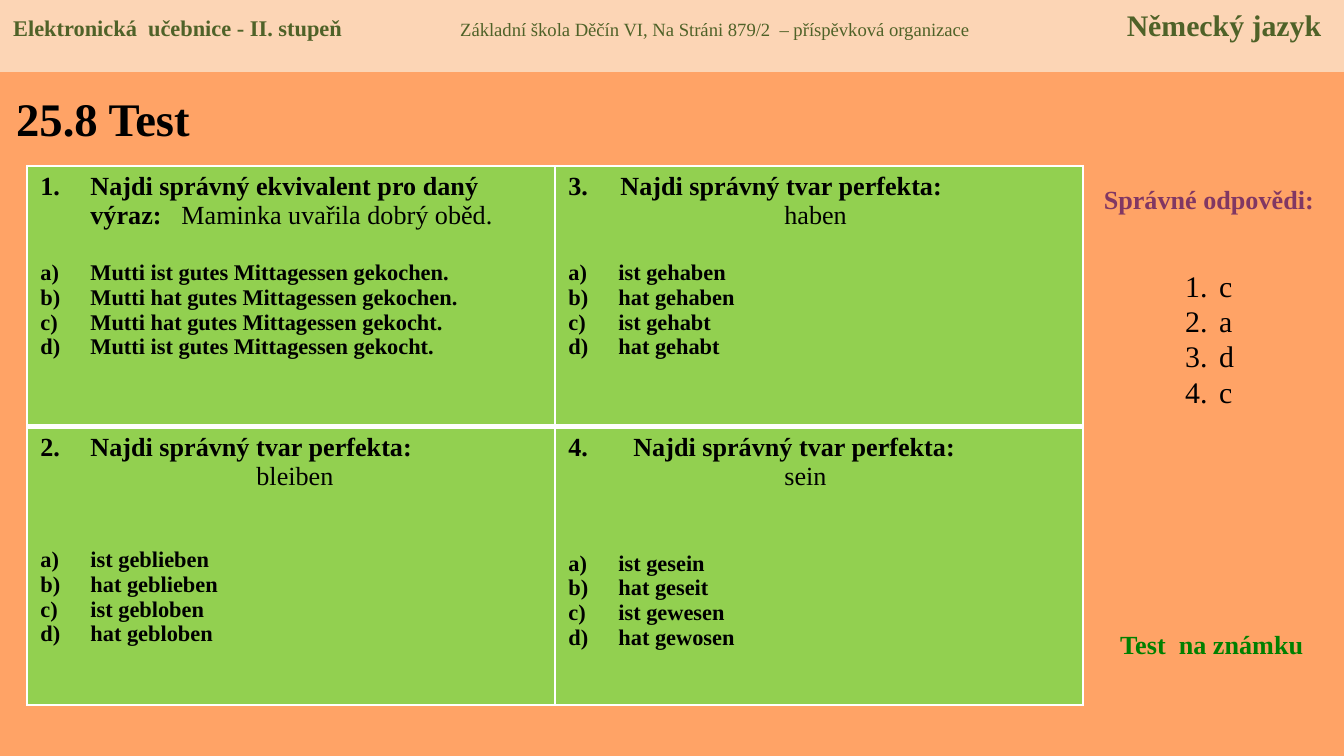
import pptx
import pptx.dml.color
import pptx.enum.shapes
import pptx.enum.text
import pptx.oxml.ns
import pptx.util
from dataclasses import dataclass
from lxml import etree

PX = 914400 / 134.4
ALIGN = pptx.enum.text.PP_ALIGN
ANCHOR = pptx.enum.text.MSO_ANCHOR


@dataclass(frozen=True)
class Theme:
    font: str = "Times New Roman"
    back: str = "FFA366"
    band: str = "FCD5B5"
    cell: str = "92D050"
    rule: str = "FFFFFF"
    ink: str = "000000"
    olive: str = "4F6228"
    plum: str = "813763"
    green: str = "008000"
    title: int = 25
    large: int = 16
    head: int = 14
    body: int = 12
    small: int = 10


THEME = Theme()

# Number, indent of the heading, gap before the options (pt), heading, word, options
TASKS = [
    [(1, 50, 16, "Najdi správný ekvivalent pro daný výraz:", "Maminka uvařila dobrý oběd.",
      ["Mutti ist gutes Mittagessen gekochen.", "Mutti hat gutes Mittagessen gekochen.",
       "Mutti hat gutes Mittagessen gekocht.", "Mutti ist gutes Mittagessen gekocht."]),
     (3, 52, 16, "Najdi správný tvar perfekta:", "haben",
      ["ist gehaben", "hat gehaben", "ist gehabt", "hat gehabt"])],
    [(2, 50, 30, "Najdi správný tvar perfekta:", "bleiben",
      ["ist geblieben", "hat geblieben", "ist gebloben", "hat gebloben"]),
     (4, 65, 32, "Najdi správný tvar perfekta:", "sein",
      ["ist gesein", "hat geseit", "ist gewesen", "hat gewosen"])],
]


def emu(px):
    return round(px * PX)


def color(code):
    return pptx.dml.color.RGBColor.from_string(code)


def sub(node, tag, **attrs):
    return etree.SubElement(node, pptx.oxml.ns.qn(tag), **attrs)


def write(para, text, size, ink=THEME.ink, bold=False):
    run = para.add_run()
    run.text = text
    font = run.font
    font.name, font.size, font.bold = THEME.font, pptx.util.Pt(size), bold
    font.color.rgb = color(ink)


def tabs(para, *stops):
    """Add tab stops, each a pair of px and alignment."""
    group = sub(para._p.get_or_add_pPr(), "a:tabLst")
    for px, side in stops:
        sub(group, "a:tab", pos=str(emu(px)), algn=side)


def number(para, indent, kind, start=1):
    """Number a paragraph with a hanging indent in px."""
    props = para._p.get_or_add_pPr()
    props.set("marL", str(emu(indent)))
    props.set("indent", str(-emu(indent)))
    sub(props, "a:buFont", typeface="+mj-lt")
    sub(props, "a:buAutoNum", type=kind, startAt=str(start))


def label(slide, box, text, size, ink=THEME.ink, bold=True,
          align=ALIGN.LEFT, anchor=ANCHOR.TOP):
    frame = slide.shapes.add_textbox(*map(emu, box)).text_frame
    frame.word_wrap = True
    frame.vertical_anchor = anchor
    para = frame.paragraphs[0]
    para.alignment = align
    write(para, text, size, ink, bold)


def header(slide, box):
    band = slide.shapes.add_shape(pptx.enum.shapes.MSO_SHAPE.RECTANGLE, *map(emu, box))
    band.shadow.inherit = False
    band.fill.solid()
    band.fill.fore_color.rgb = color(THEME.band)
    band.line.fill.background()
    frame = band.text_frame
    frame.word_wrap = True
    frame.vertical_anchor = ANCHOR.TOP
    para = frame.paragraphs[0]
    para.alignment = ALIGN.LEFT
    tabs(para, (447, "l"), (box[2] - 36, "r"))
    write(para, "Elektronická  učebnice - II. stupeň\t", THEME.body, THEME.olive, True)
    write(para, "Základní škola Děčín VI, Na Stráni 879/2  – příspěvková organizace\t",
          THEME.small, THEME.olive)
    write(para, "Německý jazyk", THEME.large, THEME.olive, True)


def border(cell, last):
    props = cell._tc.get_or_add_tcPr()
    for side in "LRTB":
        width = 1 if last or side != "B" else 3
        line = sub(props, f"a:ln{side}", w=str(pptx.util.Pt(width)))
        sub(sub(line, "a:solidFill"), "a:srgbClr", val=THEME.rule)


def task(cell, data):
    start, indent, gap, head, word, options = data
    frame = cell.text_frame
    para = frame.paragraphs[0]
    number(para, indent, "arabicPeriod", start)
    write(para, head, THEME.head, bold=True)
    if start == 1:
        tabs(para, (141, "l"))
        write(para, "\t" + word, THEME.head)
    else:
        para = frame.add_paragraph()
        para._p.get_or_add_pPr().set("marL", str(emu(216)))
        write(para, word, THEME.head)
    for i, option in enumerate(options):
        para = frame.add_paragraph()
        para.space_before = pptx.util.Pt(0 if i else gap)
        number(para, 50, "alphaLcParenR")
        write(para, option, THEME.body, bold=True)


def quiz(slide, box):
    table = slide.shapes.add_table(2, 2, *map(emu, box)).table
    table.first_row = table.horz_banding = False
    upper = 261
    for row, height in zip(table.rows, (upper, box[3] - upper)):
        row.height = emu(height)
    for r, line in enumerate(TASKS):
        for c, data in enumerate(line):
            cell = table.cell(r, c)
            border(cell, r == 1)
            cell.fill.solid()
            cell.fill.fore_color.rgb = color(THEME.cell)
            task(cell, data)


def key(slide, box):
    """Place the answers and the note under them."""
    left, top, width, height = box
    label(slide, (left, top, width, 46), "Správné odpovědi:", THEME.head,
          THEME.plum, align=ALIGN.CENTER)
    frame = slide.shapes.add_textbox(*map(emu, (left + 90, top + 84, 74, 156))).text_frame
    frame.word_wrap = True
    for i, answer in enumerate("cadc"):
        para = frame.add_paragraph() if i else frame.paragraphs[0]
        para.line_spacing = pptx.util.Pt(19)
        number(para, 34, "arabicPeriod")
        write(para, answer, THEME.large)
    label(slide, (left + 25, top + height - 46, 211, 46), "Test  na známku",
          THEME.head, THEME.green)


def main():
    deck = pptx.Presentation()
    deck.slide_width, deck.slide_height = emu(1344), emu(756)
    slide = deck.slides.add_slide(deck.slide_layouts[6])
    slide.background.fill.solid()
    slide.background.fill.fore_color.rgb = color(THEME.back)
    header(slide, (0, 0, 1344, 72))
    label(slide, (3, 74, 429, 87), "25.8 Test", THEME.title, anchor=ANCHOR.MIDDLE)
    quiz(slide, (27, 166, 1056, 539))
    key(slide, (1082, 177, 254, 491))
    deck.save("out.pptx")


if __name__ == "__main__":
    main()
